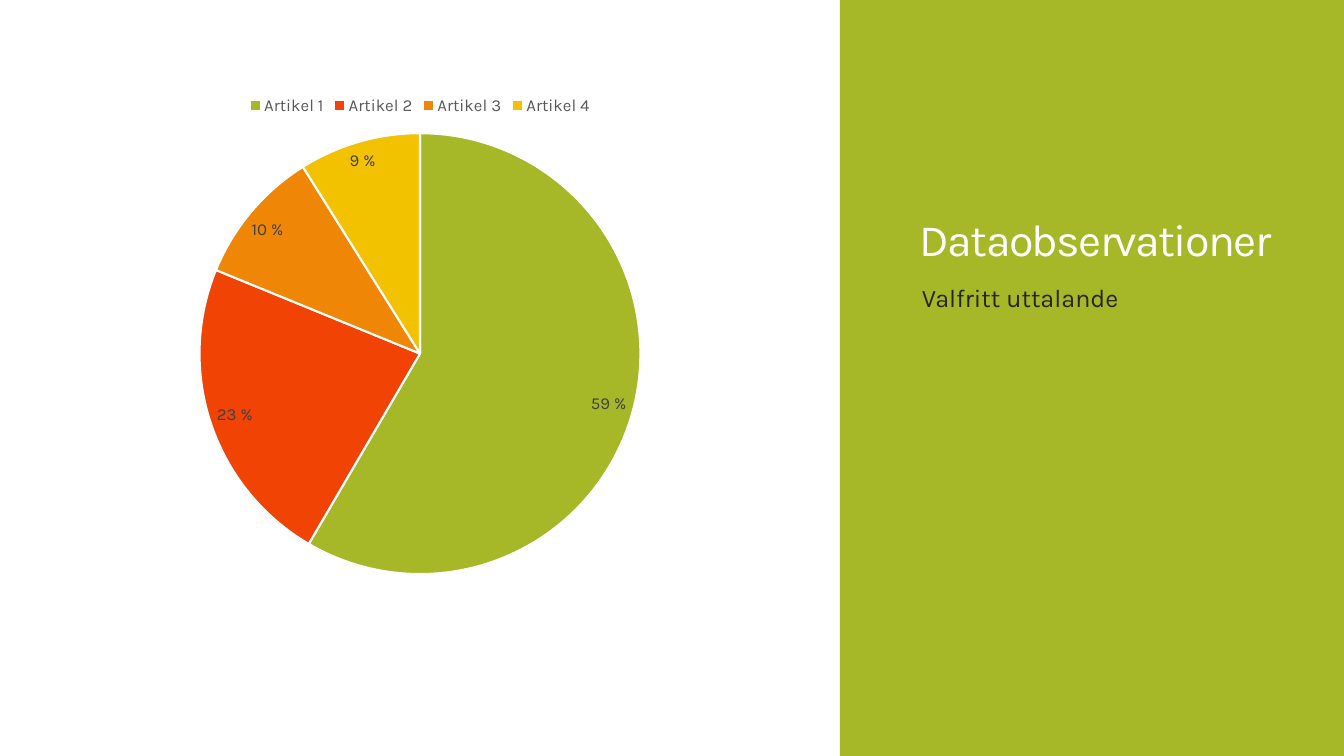
from pptx import Presentation
from pptx.chart.data import CategoryChartData
from pptx.dml.color import RGBColor
from pptx.enum.chart import XL_CHART_TYPE as ChartType
from pptx.enum.chart import XL_LABEL_POSITION as LabelPosition
from pptx.enum.chart import XL_LEGEND_POSITION as LegendPosition
from pptx.enum.shapes import MSO_SHAPE as Shape
from pptx.enum.text import MSO_ANCHOR as Anchor
from pptx.util import Pt

FONT = "Karla"
WHITE = RGBColor(0xFF, 0xFF, 0xFF)
BLACK = RGBColor(0x00, 0x00, 0x00)
INK = RGBColor(0x26, 0x26, 0x26)
LABEL_GREY = RGBColor(0x40, 0x40, 0x40)
LEGEND_GREY = RGBColor(0x59, 0x59, 0x59)
GREEN = RGBColor(0xA6, 0xB7, 0x27)
RED = RGBColor(0xF0, 0x43, 0x04)
ORANGE = RGBColor(0xEF, 0x86, 0x06)
YELLOW = RGBColor(0xF2, 0xC1, 0x00)

# Article, share in percent, slice colour
ARTICLES = [
    ("Artikel 1", 59, GREEN),
    ("Artikel 2", 23, RED),
    ("Artikel 3", 10, ORANGE),
    ("Artikel 4", 9, YELLOW),
]


def style_font(font, size, color):
    font.name = FONT
    font.size = Pt(size)
    font.color.rgb = color


def add_panel(slide, left, top, width, height):
    panel = slide.shapes.add_shape(
        Shape.RECTANGLE, Pt(left), Pt(top), Pt(width), Pt(height))
    panel.shadow.inherit = False
    panel.fill.solid()
    panel.fill.fore_color.rgb = GREEN
    panel.line.fill.background()


def add_text(slide, text, box, size, color, anchor):
    frame = slide.shapes.add_textbox(*map(Pt, box)).text_frame
    frame.word_wrap = True
    frame.vertical_anchor = anchor
    paragraph = frame.paragraphs[0]
    paragraph.text = text
    style_font(paragraph.runs[0].font, size, color)
    return paragraph


def add_article_pie(slide, left, top, width, height):
    names, shares, colors = zip(*ARTICLES)
    shares_data = CategoryChartData()
    shares_data.categories = names
    shares_data.add_series("Series 1", shares)
    chart = slide.shapes.add_chart(
        ChartType.PIE, Pt(left), Pt(top), Pt(width), Pt(height),
        shares_data).chart
    chart.has_title = False
    style_font(chart.font, 10, BLACK)

    # Legend above the pie
    chart.has_legend = True
    chart.legend.position = LegendPosition.TOP
    chart.legend.include_in_layout = False
    style_font(chart.legend.font, 12, LEGEND_GREY)

    # Slices
    plot = chart.plots[0]
    plot.vary_by_categories = True
    for index, color in enumerate(colors):
        slice_format = plot.series[0].points[index].format
        slice_format.fill.solid()
        slice_format.fill.fore_color.rgb = color
        slice_format.line.color.rgb = WHITE
        slice_format.line.width = Pt(1.5)

    # The rounded shares add up to 101, so the labels show them as values
    labels = plot.series[0].data_labels
    labels.show_value = True
    labels.number_format = "0\\ \\%"
    labels.number_format_is_linked = False
    labels.position = LabelPosition.BEST_FIT
    style_font(labels.font, 12, LABEL_GREY)


def main():
    prs = Presentation()
    prs.slide_width, prs.slide_height = Pt(960), Pt(540)
    slide = prs.slides.add_slide(prs.slide_layouts[6])

    # Side panel with heading and statement
    add_panel(slide, 600, 0, 360, 540)
    heading = add_text(slide, "Dataobservationer", (650, 42.5, 266.5, 151),
                       32, WHITE, Anchor.BOTTOM)
    heading.line_spacing = 0.85
    heading.runs[0].font._element.set("spc", "-120")
    statement = add_text(slide, "Valfritt uttalande", (651.5, 198, 268, 246),
                         18, INK, Anchor.TOP)
    statement.space_before = Pt(12)

    # Shares per article
    add_article_pie(slide, 60, 60, 480, 360)

    prs.save("out.pptx")


if __name__ == "__main__":
    main()
